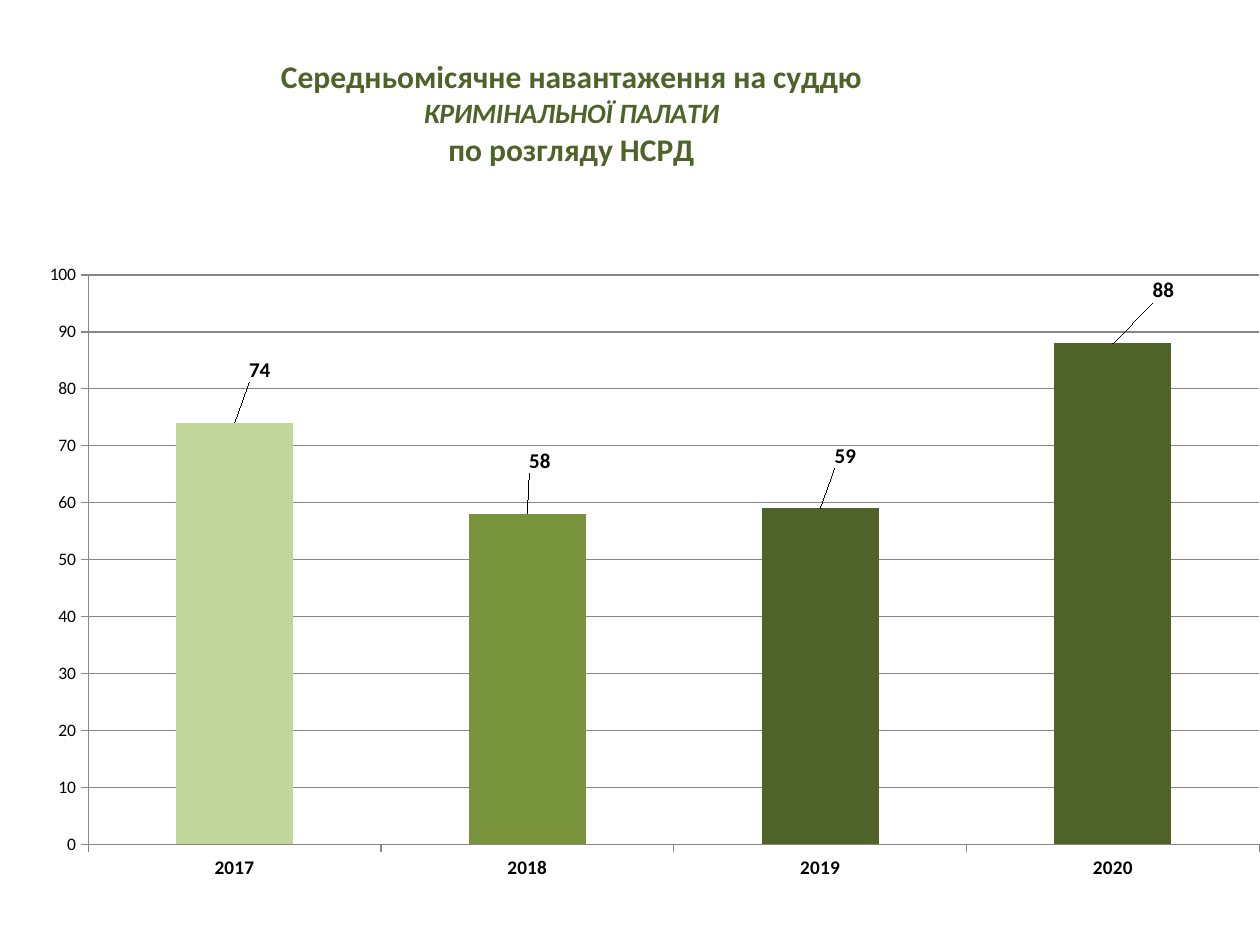
from lxml import etree
from pptx import Presentation
from pptx import util as u
from pptx.chart.data import CategoryChartData
from pptx.dml.color import RGBColor
from pptx.enum import chart as ch
from pptx.oxml.ns import qn

PX = 914400 // 126
BLACK = RGBColor(0x00, 0x00, 0x00)
GRAY = RGBColor(0x86, 0x86, 0x86)
LIGHT = RGBColor(0xC3, 0xD6, 0x9B)
GREEN = RGBColor(0x77, 0x93, 0x3C)
DARK = RGBColor(0x4F, 0x62, 0x28)

TITLE = [
    ("Середньомісячне навантаження на суддю", 18, False),
    ("КРИМІНАЛЬНОЇ ПАЛАТИ", 16, True),
    ("по розгляду НСРД", 18, False),
]
BARS = [
    ("2017", 74, LIGHT, (0.02, -0.04)),
    ("2018", 58, GREEN, (0.01, -0.04)),
    ("2019", 59, DARK, (0.02, -0.04)),
    ("2020", 88, DARK, (0.04, -0.04)),
]


def add_layout(parent, index, **values):
    for old in parent.findall(qn("c:layout")):
        parent.remove(old)
    layout = etree.Element(qn("c:layout"))
    manual = etree.SubElement(layout, qn("c:manualLayout"))
    for name, value in values.items():
        etree.SubElement(manual, qn("c:" + name)).set("val", str(value))
    parent.insert(index, layout)


prs = Presentation()
prs.slide_width, prs.slide_height = u.Inches(10), u.Inches(7.5)
s = prs.slides.add_slide(prs.slide_layouts[6])

data = CategoryChartData()
data.categories = [bar[0] for bar in BARS]
data.add_series("Series 1", [bar[1] for bar in BARS])
chart = s.shapes.add_chart(
    ch.XL_CHART_TYPE.COLUMN_CLUSTERED, 0, 26 * PX, 1260 * PX, 880 * PX, data
).chart
chart.has_legend = False
chart.font.name, chart.font.size = "Calibri", u.Pt(10)
chart.font.color.rgb = BLACK

chart.has_title = True
title = chart.chart_title
title.include_in_layout = False
tf = title.text_frame
tf.text = "\n".join(line[0] for line in TITLE)
for p, (_, size, italic) in zip(tf.paragraphs, TITLE):
    font = p.runs[0].font
    font.name, font.size = "Calibri", u.Pt(size)
    font.bold, font.italic = True, italic
    font.color.rgb = DARK
add_layout(title._element, 1, xMode="edge", yMode="edge", x=0.22, y=0.03)

plot_area = chart._chartSpace.find(".//" + qn("c:plotArea"))
add_layout(plot_area, 0, layoutTarget="inner", xMode="edge", yMode="edge",
           x=0.07, y=0.283, w=0.93, h=0.647)

cat, val = chart.category_axis, chart.value_axis
val.minimum_scale, val.maximum_scale, val.major_unit = 0, 100, 10
val.has_major_gridlines = True
cat.tick_labels.font.size = u.Pt(11)
cat.tick_labels.font.bold = True
for axis in (cat, val):
    axis.major_tick_mark = ch.XL_TICK_MARK.OUTSIDE
    axis.format.line.color.rgb = GRAY
val.major_gridlines.format.line.color.rgb = GRAY

plot = chart.plots[0]
plot.gap_width = 150
plot.vary_by_categories = False
series = plot.series[0]
series.format.fill.solid()
series.format.fill.fore_color.rgb = DARK
labels = series.data_labels
labels.show_value = True
labels.font.size, labels.font.bold = u.Pt(12), True

for i, (_, _, color, (dx, dy)) in enumerate(BARS):
    point = series.points[i]
    point.format.fill.solid()
    point.format.fill.fore_color.rgb = color
    label = point.data_label
    label.font.size, label.font.bold = u.Pt(12), True
    label.position = ch.XL_LABEL_POSITION.OUTSIDE_END
    add_layout(series._element.findall(".//" + qn("c:dLbl"))[i], 1, x=dx, y=dy)

prs.save("out.pptx")
